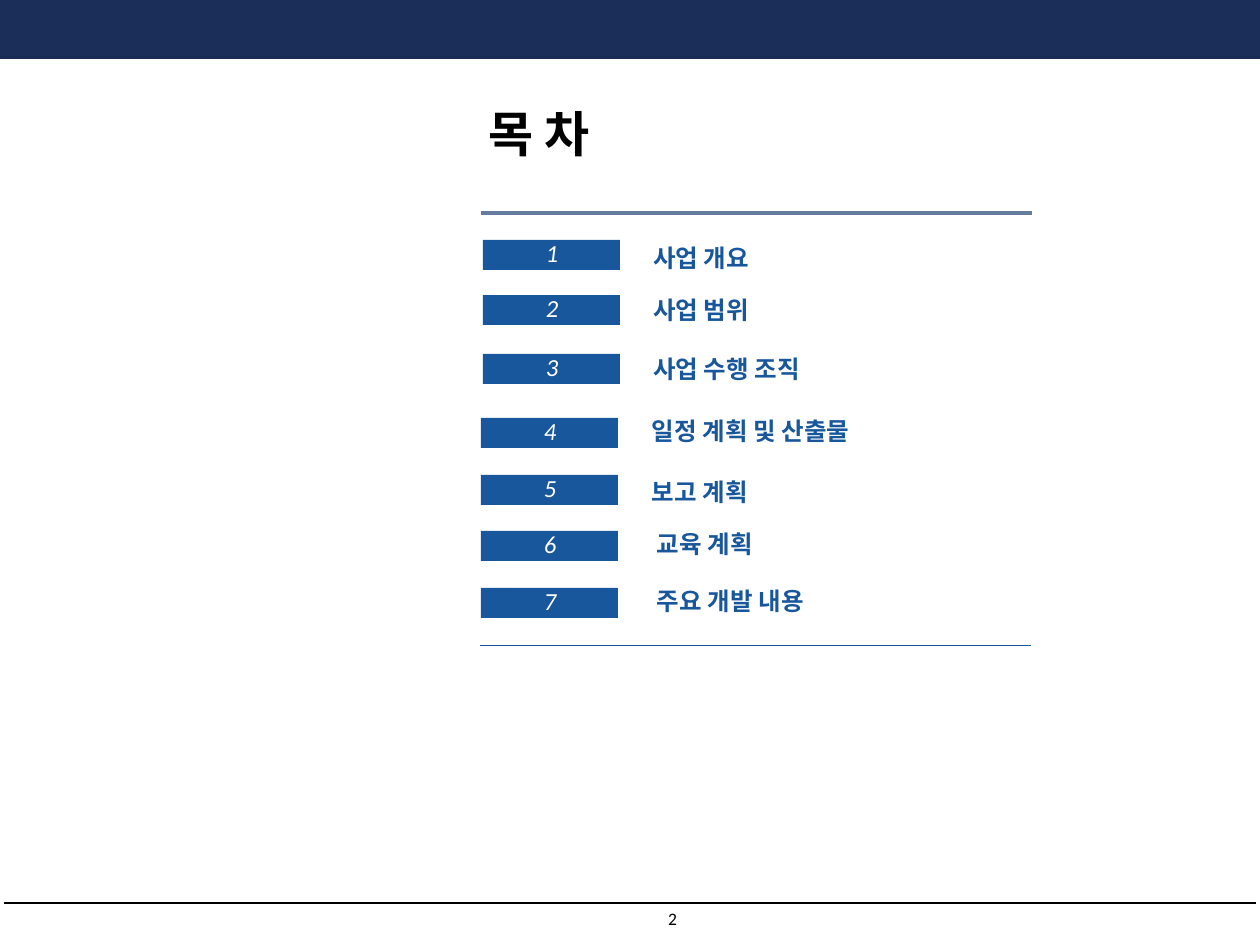
"""Build the table of contents slide with seven numbered entries."""
from lxml import etree
from pptx import Presentation, util as u
from pptx.dml.color import RGBColor
from pptx.enum import shapes, text
from pptx.oxml.ns import qn

TITLE = "목 차"
PAGE = "2"
ITEMS = [
    ("사업 개요", 483, 240, 640, 237),
    ("사업 범위", 483, 295, 640, 289),
    ("사업 수행 조직", 483, 354, 640, 348),
    ("일정 계획 및 산출물", 481, 418, 639, 410),
    ("보고 계획", 481, 475, 639, 471),
    ("교육 계획", 481, 531, 644, 523),
    ("주요 개발 내용", 481, 588, 644, 580),
]
RULES = [
    (4, 1256, 903, "black", 0.75),
    (481, 1032, 213, "slate", 2.25),
    (480, 1031, 645, "blue", 0.5),
]
HEX = {"navy": "1B2E5A", "blue": "18579B", "slate": "657D9D",
       "black": "000000", "white": "FFFFFF"}
LATIN, HANGUL = "Calibri", "Noto Sans CJK KR"
ALIGN, ANCHOR = text.PP_ALIGN, text.MSO_ANCHOR


def px(num):
    return u.Emu(round(num * 914400 / 126))


def rgb(name):
    return RGBColor.from_string(HEX[name])


def write(shape, words, size, face, color, bold=False, slant=False,
          align=ALIGN.LEFT, anchor=ANCHOR.TOP, pad=(5, 5), wrap=True):
    frame = shape.text_frame
    frame.text = words
    frame.word_wrap = wrap
    frame.auto_size = text.MSO_AUTO_SIZE.NONE
    frame.vertical_anchor = anchor
    frame.margin_left = frame.margin_right = px(pad[0])
    frame.margin_top = frame.margin_bottom = px(pad[1])
    para = frame.paragraphs[0]
    para.alignment = align
    font = para.runs[0].font
    font.size, font.name = u.Pt(size), face
    font.bold, font.italic = bold, slant
    font.color.rgb = rgb(color)
    east = etree.SubElement(para.runs[0]._r.get_or_add_rPr(), qn("a:ea"))
    east.set("typeface", face)


def block(slide, box, color):
    shape = slide.shapes.add_shape(shapes.MSO_SHAPE.RECTANGLE, *map(px, box))
    shape.shadow.inherit = False
    shape.fill.solid()
    shape.fill.fore_color.rgb = rgb(color)
    shape.line.fill.background()


def rule(slide, left, right, top, color, width):
    line = slide.shapes.add_connector(
        shapes.MSO_CONNECTOR.STRAIGHT, px(left), px(top), px(right), px(top))
    line.line.color.rgb = rgb(color)
    line.line.width = u.Pt(width)
    etree.SubElement(line._element.spPr, qn("a:effectLst"))


def label(slide, box, words, *args, **style):
    write(slide.shapes.add_textbox(*map(px, box)), words, *args, **style)


def main():
    deck = Presentation()
    deck.slide_width, deck.slide_height = px(1260), px(945)
    slide = deck.slides.add_slide(deck.slide_layouts[5])
    block(slide, (0, 0, 1260, 59), "navy")
    for row in RULES:
        rule(slide, *row)

    title = slide.shapes.title
    title.left, title.top, title.width, title.height = map(px, (483, 103, 350, 60))
    write(title, TITLE, 28, HANGUL, "black", bold=True, anchor=ANCHOR.MIDDLE)

    for num, (words, left, top, x, y) in enumerate(ITEMS, 1):
        block(slide, (left, top, 137, 30), "blue")
        label(slide, (left + 40, top - 7, 58, 40), str(num), 14, LATIN, "white",
              slant=True, align=ALIGN.CENTER)
        label(slide, (x, y, 374, 43), words, 14, HANGUL, "blue",
              bold=True, pad=(13, 6))

    label(slide, (656, 908, 21, 21), PAGE, 10, LATIN, "black",
          align=ALIGN.RIGHT, pad=(0, 0), wrap=False)
    deck.save("out.pptx")


if __name__ == "__main__":
    main()
